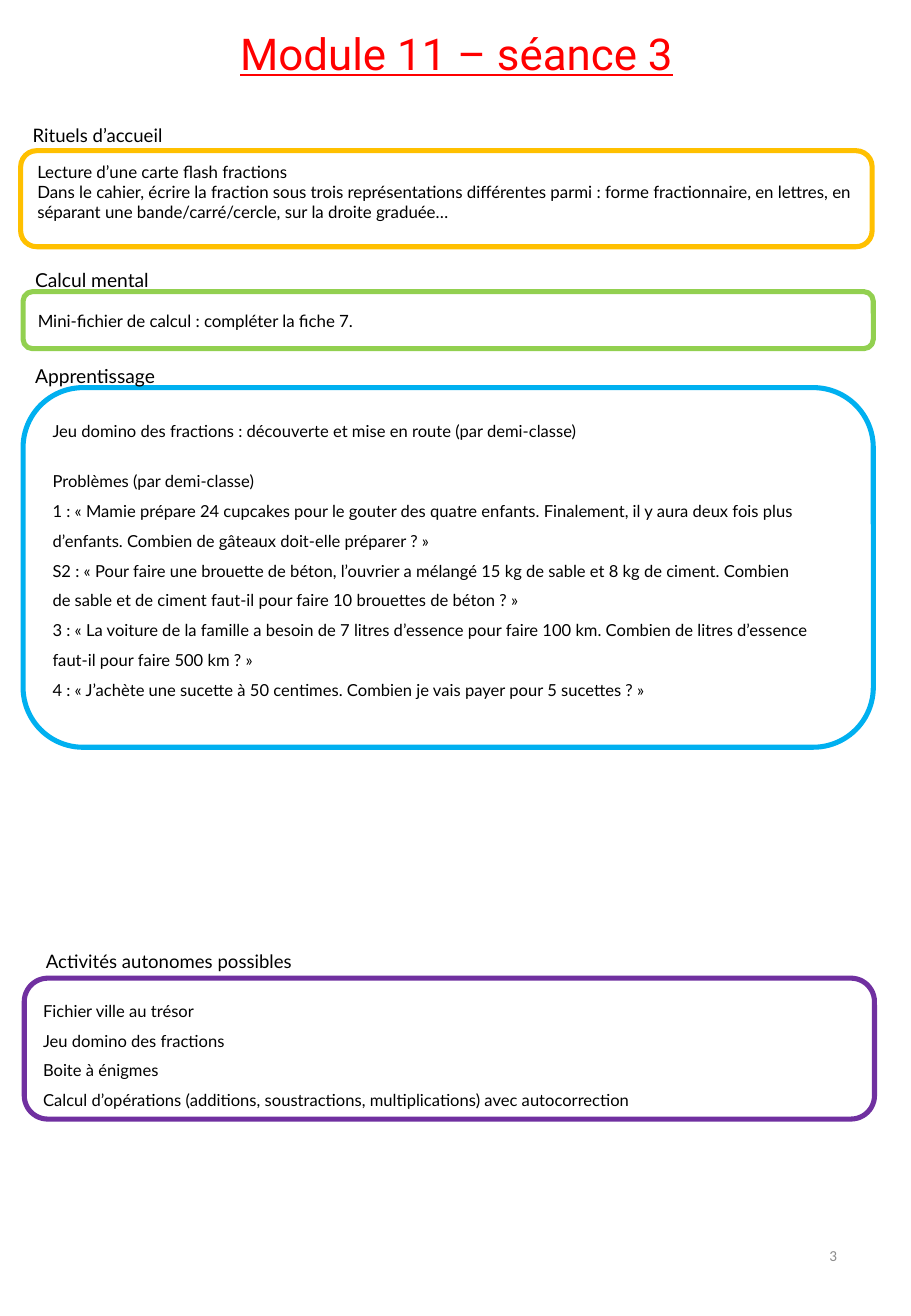
"""Build the one-page lesson plan for module 11, session 3."""
from dataclasses import dataclass

from pptx import Presentation
from pptx.dml.color import RGBColor
from pptx.enum.shapes import MSO_SHAPE
from pptx.enum.text import MSO_ANCHOR, PP_ALIGN
from pptx.util import Inches, Pt

TITLE = "Module 11 – séance 3"
PAGE_NUMBER = "3"
PROBLEMS_HEADING = "Problèmes (par demi-classe)"

SECTIONS = [
    dict(heading="Rituels d’accueil", heading_size=11, heading_at=(17, 97, 192, 29),
         frame_at=(17, 124, 701, 79), color="FFC000", size=10, spacing=1.0,
         activities=[
             "Lecture d’une carte flash fractions",
             "Dans le cahier, écrire la fraction sous trois représentations différentes parmi : "
             "forme fractionnaire, en lettres, en séparant une bande/carré/cercle, "
             "sur la droite graduée…",
         ]),
    dict(heading="Calcul mental", heading_size=11.4, heading_at=(19, 216, 213, 29),
         frame_at=(19, 240, 700, 47), color="92D050", size=10, spacing=1.5,
         activities=["Mini-fichier de calcul : compléter la fiche 7."]),
    dict(heading="Apprentissage", heading_size=11.4, heading_at=(19, 295, 192, 29),
         frame_at=(19, 319, 700, 296), color="00B0F0", size=9.8, spacing=1.5,
         activities=[
             "Jeu domino des fractions : découverte et mise en route (par demi-classe)",
             PROBLEMS_HEADING,
             "1 : « Mamie prépare 24 cupcakes pour le gouter des quatre enfants. Finalement, "
             "il y aura deux fois plus d’enfants. Combien de gâteaux doit-elle préparer ? »",
             "S2 : « Pour faire une brouette de béton, l’ouvrier a mélangé 15 kg de sable "
             "et 8 kg de ciment. Combien",
             "de sable et de ciment faut-il pour faire 10 brouettes de béton ? »",
             "3 : « La voiture de la famille a besoin de 7 litres d’essence pour faire 100 km. "
             "Combien de litres d’essence",
             "faut-il pour faire 500 km ? »",
             "4 : « J’achète une sucette à 50 centimes. Combien je vais payer pour 5 sucettes ? »",
         ]),
    dict(heading="Activités autonomes possibles", heading_size=11, heading_at=(28, 777, 324, 29),
         frame_at=(20, 805, 700, 116), color="7030A0", size=9.8, spacing=1.5,
         activities=[
             "Fichier ville au trésor",
             "Jeu domino des fractions",
             "Boite à énigmes",
             "Calcul d’opérations (additions, soustractions, multiplications) avec autocorrection",
         ]),
]


@dataclass(frozen=True)
class Theme:
    title_font: str = "Roboto"
    body_font: str = "Lato"
    number_font: str = "Calibri"
    title_color: str = "FF0000"
    body_color: str = "000000"
    number_color: str = "8C8C8C"
    title_size: float = 26
    number_size: float = 9
    frame_line: float = 3
    problems_gap: float = 18


THEME = Theme()
WIDTH, HEIGHT = Inches(7.5), Inches(10.83)
COLUMNS, ROWS = 750, 1083


def place(cells):
    left, top, width, height = cells
    return (WIDTH * left // COLUMNS, HEIGHT * top // ROWS,
            WIDTH * width // COLUMNS, HEIGHT * height // ROWS)


def write(holder, lines, font, size, color, align=PP_ALIGN.LEFT, spacing=1.0,
          anchor=MSO_ANCHOR.TOP):
    frame = holder.text_frame
    frame.word_wrap = True
    frame.vertical_anchor = anchor
    frame.text = "\n".join(lines)
    for paragraph in frame.paragraphs:
        paragraph.alignment = align
        paragraph.line_spacing = spacing
        paragraph.font.name = font
        paragraph.font.size = Pt(size)
        paragraph.font.color.rgb = RGBColor.from_string(color)
    return frame.paragraphs


def add_section(slide, section):
    frame = slide.shapes.add_shape(MSO_SHAPE.ROUNDED_RECTANGLE, *place(section["frame_at"]))
    frame.shadow.inherit = False
    frame.fill.background()
    frame.line.color.rgb = RGBColor.from_string(section["color"])
    frame.line.width = Pt(THEME.frame_line)
    activities = write(frame, section["activities"], THEME.body_font, section["size"],
                       THEME.body_color, spacing=section["spacing"])
    for activity in activities:
        if activity.text == PROBLEMS_HEADING:
            activity.line_spacing = 1.0
            activity.space_before = Pt(THEME.problems_gap)
    heading = slide.shapes.add_textbox(*place(section["heading_at"]))
    write(heading, [section["heading"]], THEME.body_font, section["heading_size"],
          THEME.body_color)


def main():
    deck = Presentation()
    deck.slide_width, deck.slide_height = WIDTH, HEIGHT
    slide = deck.slides.add_slide(deck.slide_layouts[6])

    title = slide.shapes.add_textbox(*place((182, 17, 388, 54)))
    for line in write(title, [TITLE], THEME.title_font, THEME.title_size,
                      THEME.title_color, PP_ALIGN.CENTER):
        line.font.underline = True

    for section in SECTIONS:
        add_section(slide, section)

    number = slide.shapes.add_textbox(*place((530, 1004, 169, 58)))
    write(number, [PAGE_NUMBER], THEME.number_font, THEME.number_size,
          THEME.number_color, PP_ALIGN.RIGHT, anchor=MSO_ANCHOR.MIDDLE)
    deck.save("out.pptx")


if __name__ == "__main__":
    main()
